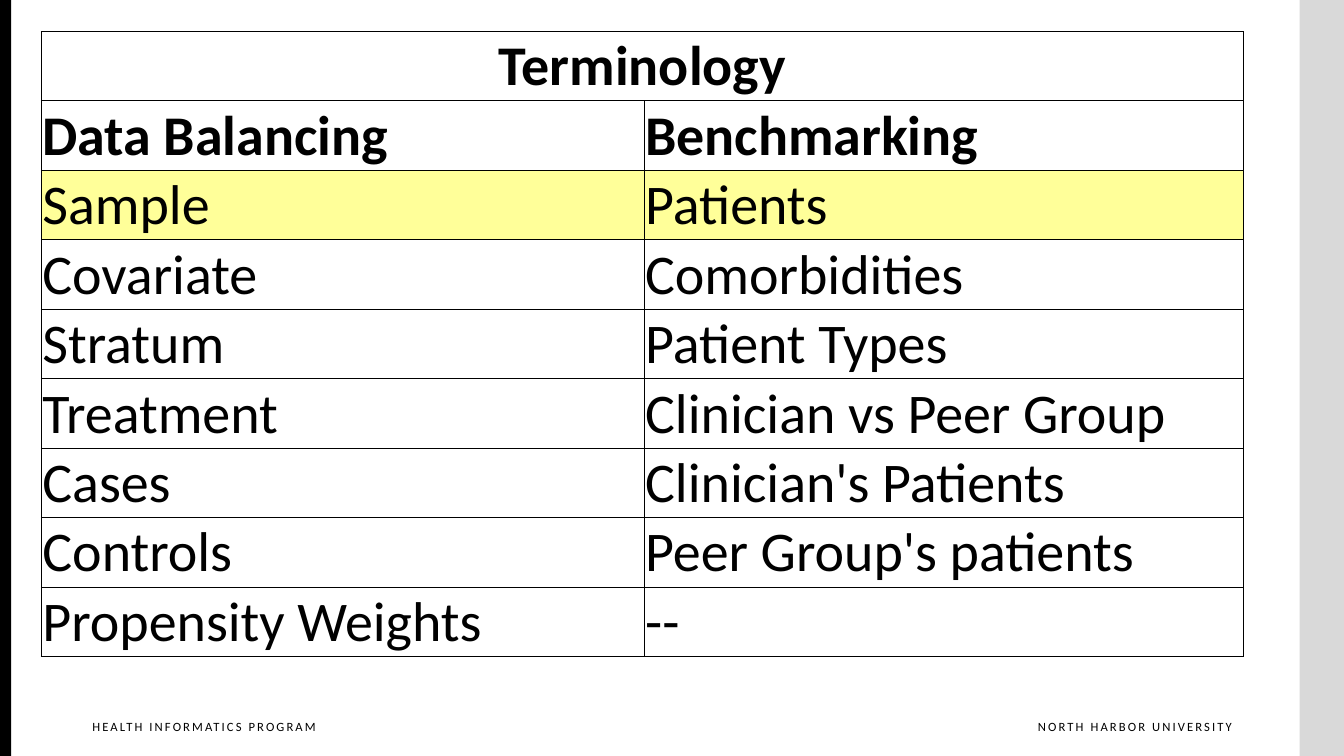
from lxml import etree
from pptx import Presentation
from pptx import util as u
from pptx.dml import color
from pptx.enum import shapes, text
from pptx.oxml import ns

COLORS = {"ink": "000000", "side": "D9D9D9", "highlight": "FFFF99"}
FONT = "Calibri"
TITLE = "Terminology"
TERMS = [
    ("Data Balancing", "Benchmarking"),
    ("Sample", "Patients"),
    ("Covariate", "Comorbidities"),
    ("Stratum", "Patient Types"),
    ("Treatment", "Clinician vs Peer Group"),
    ("Cases", "Clinician's Patients"),
    ("Controls", "Peer Group's patients"),
    ("Propensity Weights", "--"),
]
HIGHLIGHTED_ROW = 2
COLUMN_SHARE = 0.5013


def rgb(name):
    return color.RGBColor.from_string(COLORS[name])


def write_text(frame, words, size, bold=False, align=text.PP_ALIGN.LEFT, spacing=None):
    paragraph = frame.paragraphs[0]
    paragraph.alignment = align
    run = paragraph.add_run()
    run.text = words
    run.font.name = FONT
    run.font.size = u.Pt(size)
    run.font.bold = bold
    run.font.color.rgb = rgb("ink")
    if spacing:
        run.font._element.set("spc", str(int(spacing * 100)))


def add_bar(slide, left, top, width, height, fill):
    bar = slide.shapes.add_shape(
        shapes.MSO_SHAPE.RECTANGLE, u.Cm(left), u.Cm(top), u.Cm(width), u.Cm(height))
    bar.shadow.inherit = False
    bar.fill.solid()
    bar.fill.fore_color.rgb = rgb(fill)
    bar.line.fill.background()


def add_footer(slide, left, top, width, height, words, align):
    box = slide.shapes.add_textbox(u.Cm(left), u.Cm(top), u.Cm(width), u.Cm(height))
    frame = box.text_frame
    frame.word_wrap = True
    frame.margin_right = 0
    write_text(frame, words, 9, align=align, spacing=1.5)


def add_borders(cell):
    properties = cell._tc.get_or_add_tcPr()
    for position, side in enumerate(("lnL", "lnR", "lnT", "lnB")):
        line = etree.Element(ns.qn(f"a:{side}"), w=str(u.Pt(0.5)))
        fill = etree.SubElement(line, ns.qn("a:solidFill"))
        etree.SubElement(fill, ns.qn("a:srgbClr"), val=COLORS["ink"])
        properties.insert(position, line)


def format_cell(cell, highlighted):
    cell.vertical_anchor = text.MSO_ANCHOR.MIDDLE
    cell.margin_left = cell.margin_right = cell.margin_top = u.Cm(0.03)
    cell.margin_bottom = 0
    if highlighted:
        cell.fill.solid()
        cell.fill.fore_color.rgb = rgb("highlight")
    else:
        cell.fill.background()
    add_borders(cell)


def add_terms_table(slide, left, top, width, height):
    rows = len(TERMS) + 1
    table = slide.shapes.add_table(
        rows, 2, u.Cm(left), u.Cm(top), u.Cm(width), u.Cm(height)).table
    table.first_row = table.horz_banding = False
    table.columns[0].width = u.Cm(width * COLUMN_SHARE)
    table.columns[1].width = u.Cm(width) - table.columns[0].width
    for index, row in enumerate(table.rows):
        row.height = u.Cm(height / rows)
        for cell in row.cells:
            format_cell(cell, index == HIGHLIGHTED_ROW)
    table.cell(0, 0).merge(table.cell(0, 1))
    write_text(table.cell(0, 0).text_frame, TITLE, 40, bold=True,
               align=text.PP_ALIGN.CENTER)
    for index, pair in enumerate(TERMS, start=1):
        for column, term in enumerate(pair):
            write_text(table.cell(index, column).text_frame, term, 40, bold=index == 1)


def add_terminology_slide(presentation, width, height):
    slide = presentation.slides.add_slide(presentation.slide_layouts[6])
    add_bar(slide, width - 1.12, 0, 1.12, height, "side")
    add_bar(slide, 0, 0, 0.28, height, "ink")
    footer_top = height - 1.07
    add_footer(slide, 25.07, footer_top, 5.97, 0.84, "NORTH HARBOR UNIVERSITY",
               text.PP_ALIGN.RIGHT)
    add_footer(slide, 2.08, footer_top, 6.45, 0.84, "HEALTH INFORMATICS PROGRAM",
               text.PP_ALIGN.LEFT)
    add_terms_table(slide, 1.04, 0.79, 30.3, 15.75)


def main():
    width, height = 33.87, 19.05
    presentation = Presentation()
    presentation.slide_width = u.Cm(width)
    presentation.slide_height = u.Cm(height)
    add_terminology_slide(presentation, width, height)
    presentation.save("out.pptx")


if __name__ == "__main__":
    main()
